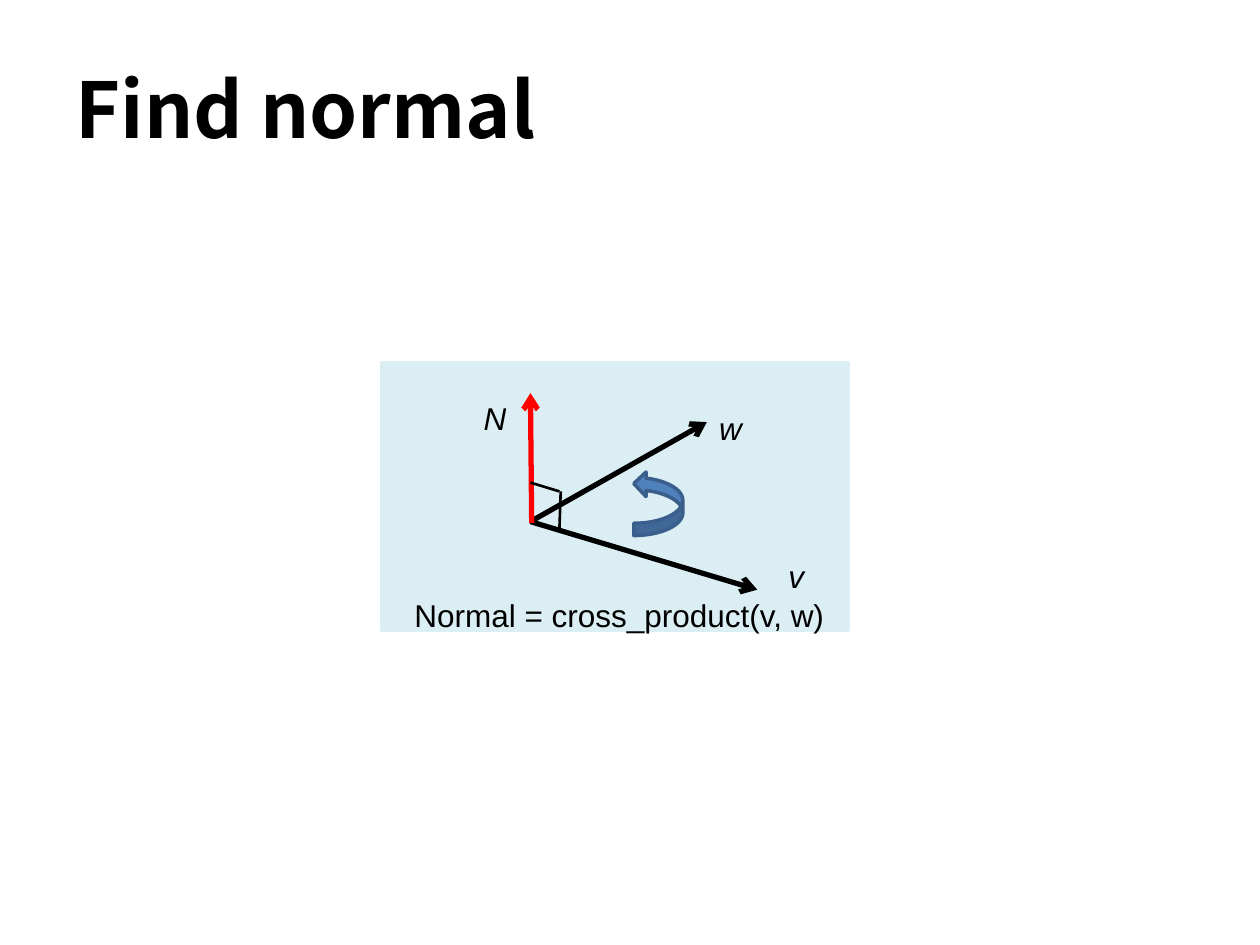
from lxml import etree
from pptx import Presentation
from pptx.dml.color import RGBColor
from pptx.enum import shapes, text
from pptx.oxml import parse_xml
from pptx.oxml.ns import nsdecls, qn
from pptx.util import Inches, Pt

# Content
COLORS = {"panel": "DBEEF4", "ink": "000000", "normal": "FF0000",
          "turn": "4F81BD", "turn_edge": "3A5F8C"}
TITLE = "Find normal"
PANEL = (3.03, 2.88, 3.7, 2.12)
TURN = (4.97, 3.8, 0.51, 0.39)
ORIGIN = (4.21, 4.14)
VECTORS = [  # start, end, colour, label, label position
    (ORIGIN, (6.01, 4.68), "ink", "v", (6.16, 4.37)),
    (ORIGIN, (5.61, 3.35), "ink", "w", (5.61, 3.2)),
    ((4.22, 4.15), (4.21, 3.12), "normal", "N", (3.74, 3.12)),
]
RIGHT_ANGLE = [((4.21, 3.83), (4.44, 3.9)), ((4.45, 3.9), (4.44, 4.2))]
FORMULA = "Normal = cross_product(v, w)"
SHADOW = (f'<a:effectLst {nsdecls("a")}>'
          '<a:outerShdw blurRad="38100" dist="38100" dir="2700000" algn="tl">'
          '<a:srgbClr val="000000"><a:alpha val="43000"/></a:srgbClr>'
          '</a:outerShdw></a:effectLst>')


def rgb(name):
    return RGBColor.from_string(COLORS[name])


def write(tf, words, size=18, font="Arial", bold=False, italic=False):
    tf.word_wrap = True
    p = tf.paragraphs[0]
    p.alignment = text.PP_ALIGN.LEFT
    r = p.add_run()
    r.text = words
    r.font.size, r.font.name = Pt(size), font
    r.font.bold, r.font.italic = bold, italic
    r.font.color.rgb = rgb("ink")
    return r


def add_label(s, words, box, **fmt):
    tf = s.shapes.add_textbox(*map(Inches, box)).text_frame
    write(tf, words, **fmt)


def add_preset(s, kind, box, fill, edge):
    sp = s.shapes.add_shape(kind, *map(Inches, box))
    sp.shadow.inherit = False
    sp.fill.solid()
    sp.fill.fore_color.rgb = rgb(fill)
    sp.line.color.rgb = rgb(edge)
    sp.line.width = Pt(2)
    return sp


def add_line(s, start, end, color="ink", width=1.5, arrow=False):
    cn = s.shapes.add_connector(shapes.MSO_CONNECTOR.STRAIGHT,
                                *map(Inches, start + end))
    cn.line.color.rgb = rgb(color)
    cn.line.width = Pt(width)
    if arrow:
        etree.SubElement(cn.line._get_or_add_ln(), qn("a:tailEnd"), type="arrow")
    etree.SubElement(cn._element.spPr, qn("a:effectLst"))


prs = Presentation()
prs.slide_width, prs.slide_height = Inches(10), Inches(7.5)
s = prs.slides.add_slide(prs.slide_layouts[5])

# Title with a soft text shadow
title = s.shapes.title
title.left, title.top, title.width, title.height = map(Inches, (0.5, 0.17, 9, 1.37))
title.text_frame.vertical_anchor = text.MSO_ANCHOR.MIDDLE
r = write(title.text_frame, TITLE, size=44, font="Noto Sans CJK SC", bold=True)
r.font._element.find(qn("a:solidFill")).addnext(parse_xml(SHADOW))

# Panel and turning arrow from v to w
add_preset(s, shapes.MSO_SHAPE.RECTANGLE, PANEL, "panel", "panel")
turn = add_preset(s, shapes.MSO_SHAPE.CURVED_UP_ARROW, TURN, "turn", "turn_edge")
turn.rotation = 270

# Vectors with their labels
for start, end, color, name, (x, y) in VECTORS:
    add_line(s, start, end, color, width=3, arrow=True)
    add_label(s, name, (x, y, 0.47, 0.51), italic=True)

# Right-angle mark and formula
for start, end in RIGHT_ANGLE:
    add_line(s, start, end)
add_label(s, FORMULA, (3.19, 4.68, 3.62, 0.4))

prs.save("out.pptx")
